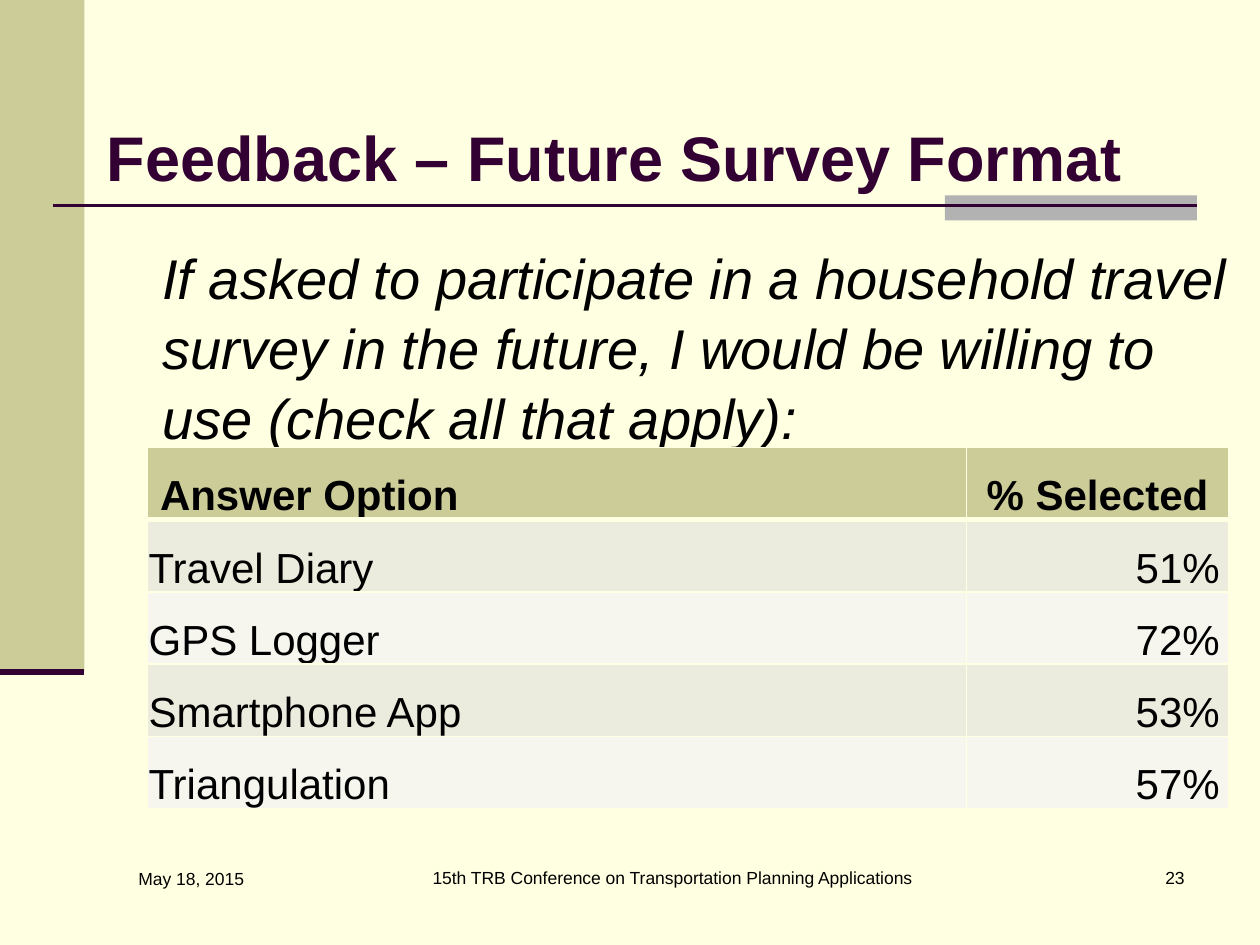
from pptx import Presentation
from pptx.dml.color import RGBColor
from pptx.enum.shapes import MSO_CONNECTOR, MSO_SHAPE
from pptx.enum.text import MSO_ANCHOR, PP_ALIGN
from pptx.oxml.ns import qn
from pptx.util import Inches, Pt
from lxml.etree import SubElement

CREAM = RGBColor(0xFF, 0xFF, 0xE1)
KHAKI = RGBColor(0xCC, 0xCC, 0x99)
GRAY = RGBColor(0xB2, 0xB2, 0xB2)
PLUM = RGBColor(0x33, 0x00, 0x33)
BLACK = RGBColor(0x00, 0x00, 0x00)
BANDS = (RGBColor(0xEC, 0xEC, 0xDE), RGBColor(0xF6, 0xF6, 0xEF))
LEFT, CENTER, RIGHT = PP_ALIGN.LEFT, PP_ALIGN.CENTER, PP_ALIGN.RIGHT

# Content
TITLE = "Feedback – Future Survey Format"
QUESTION = ("If asked to participate in a household travel survey in the future, "
            "I would be willing to use (check all that apply):")
ANSWERS = [
    ("Answer Option", "% Selected"),
    ("Travel Diary", "51%"),
    ("GPS Logger", "72%"),
    ("Smartphone App", "53%"),
    ("Triangulation", "57%"),
]
FOOTER = [  # text, left, top, width, alignment
    ("May 18, 2015", 1, 6.84, 2.17, LEFT),
    ("15th TRB Conference on Transportation Planning Applications",
     1.42, 6.83, 7.83, CENTER),
    ("23", 7.42, 6.83, 2.08, RIGHT),
]

# Layout in inches
SIDEBAR_W, SIDEBAR_H = 0.67, 5.33
RULE_Y, RULE_LEFT, RULE_RIGHT = 1.63, 0.42, 9.5
TABLE_LEFT, TABLE_TOP, ROW_H = 1.17, 3.55, 0.574
COLUMNS = (6.5, 2.08)


def style(paragraph, size, color=BLACK, align=LEFT, bold=False, italic=False):
    paragraph.alignment = align
    font = paragraph.font
    font.name, font.size, font.bold, font.italic = "Arial", Pt(size), bold, italic
    font.color.rgb = color


def add_text(slide, text, left, top, width, height, size,
             anchor=MSO_ANCHOR.TOP, **look):
    frame = slide.shapes.add_textbox(
        Inches(left), Inches(top), Inches(width), Inches(height)).text_frame
    frame.word_wrap = True
    frame.vertical_anchor = anchor
    frame.text = text
    style(frame.paragraphs[0], size, **look)
    return frame.paragraphs[0]


def add_block(slide, left, top, width, height, color):
    block = slide.shapes.add_shape(
        MSO_SHAPE.RECTANGLE, Inches(left), Inches(top), Inches(width), Inches(height))
    block.shadow.inherit = False
    block.fill.solid()
    block.fill.fore_color.rgb = color
    block.line.fill.background()


def add_rule(slide, left, right, y, weight):
    rule = slide.shapes.add_connector(
        MSO_CONNECTOR.STRAIGHT, Inches(left), Inches(y), Inches(right), Inches(y))
    rule.line.color.rgb = PLUM
    rule.line.width = Pt(weight)
    SubElement(rule._element.spPr, qn("a:effectLst"))


def set_borders(cell, bottom):
    properties = cell._tc.get_or_add_tcPr()
    for index, (side, weight) in enumerate(
            (("lnL", 1), ("lnR", 1), ("lnT", 1), ("lnB", bottom))):
        border = SubElement(properties, qn(f"a:{side}"), w=str(Pt(weight)))
        fill = SubElement(border, qn("a:solidFill"))
        SubElement(fill, qn("a:srgbClr"), val=str(CREAM))
        properties.insert(index, border)  # borders come before the fill


def add_answers(slide):
    table = slide.shapes.add_table(
        len(ANSWERS), len(COLUMNS), Inches(TABLE_LEFT), Inches(TABLE_TOP),
        Inches(sum(COLUMNS)), Inches(ROW_H * len(ANSWERS))).table
    for column, width in zip(table.columns, COLUMNS):
        column.width = Inches(width)
    for r, answer in enumerate(ANSWERS):
        header = r == 0
        table.rows[r].height = Inches(ROW_H)
        for c, text in enumerate(answer):
            cell = table.cell(r, c)
            cell.text = text
            cell.vertical_anchor = MSO_ANCHOR.BOTTOM
            cell.margin_left = Inches(0.1 if header and c == 0 else 0.01)
            cell.margin_right = Inches(0.07 if c and not header else 0.01)
            cell.margin_top, cell.margin_bottom = Inches(0.01), 0
            cell.fill.solid()
            cell.fill.fore_color.rgb = KHAKI if header else BANDS[(r - 1) % 2]
            align = LEFT if c == 0 else CENTER if header else RIGHT
            style(cell.text_frame.paragraphs[0], 24, align=align, bold=header)
            # A heavier line sets off the header, on both sides of the edge
            set_borders(cell, 3 if header else 1)
            if r == 1:
                cell._tc.tcPr.find(qn("a:lnT")).set("w", str(Pt(3)))


def main():
    prs = Presentation()
    prs.slide_width, prs.slide_height = Inches(10), Inches(7.5)
    slide = prs.slides.add_slide(prs.slide_layouts[6])
    slide.background.fill.solid()
    slide.background.fill.fore_color.rgb = CREAM

    # Decoration
    add_block(slide, 0, 0, SIDEBAR_W, SIDEBAR_H, KHAKI)
    add_block(slide, RULE_RIGHT - 2, 1.55, 2, 0.2, GRAY)
    add_rule(slide, RULE_LEFT, RULE_RIGHT, RULE_Y, 1.5)
    add_rule(slide, 0, SIDEBAR_W, SIDEBAR_H, 3.5)

    # Title, footer and question
    add_text(slide, TITLE, 0.75, 0.92, 8.92, 0.64, 36,
             anchor=MSO_ANCHOR.MIDDLE, color=PLUM, bold=True)
    for text, left, top, width, align in FOOTER:
        add_text(slide, text, left, top, width, 0.5, 10, align=align)
    question = add_text(slide, QUESTION, 1.19, 1.86, 8.81, 1.69, 32, italic=True)
    question.line_spacing = 1.04

    add_answers(slide)
    prs.save("out.pptx")


if __name__ == "__main__":
    main()
